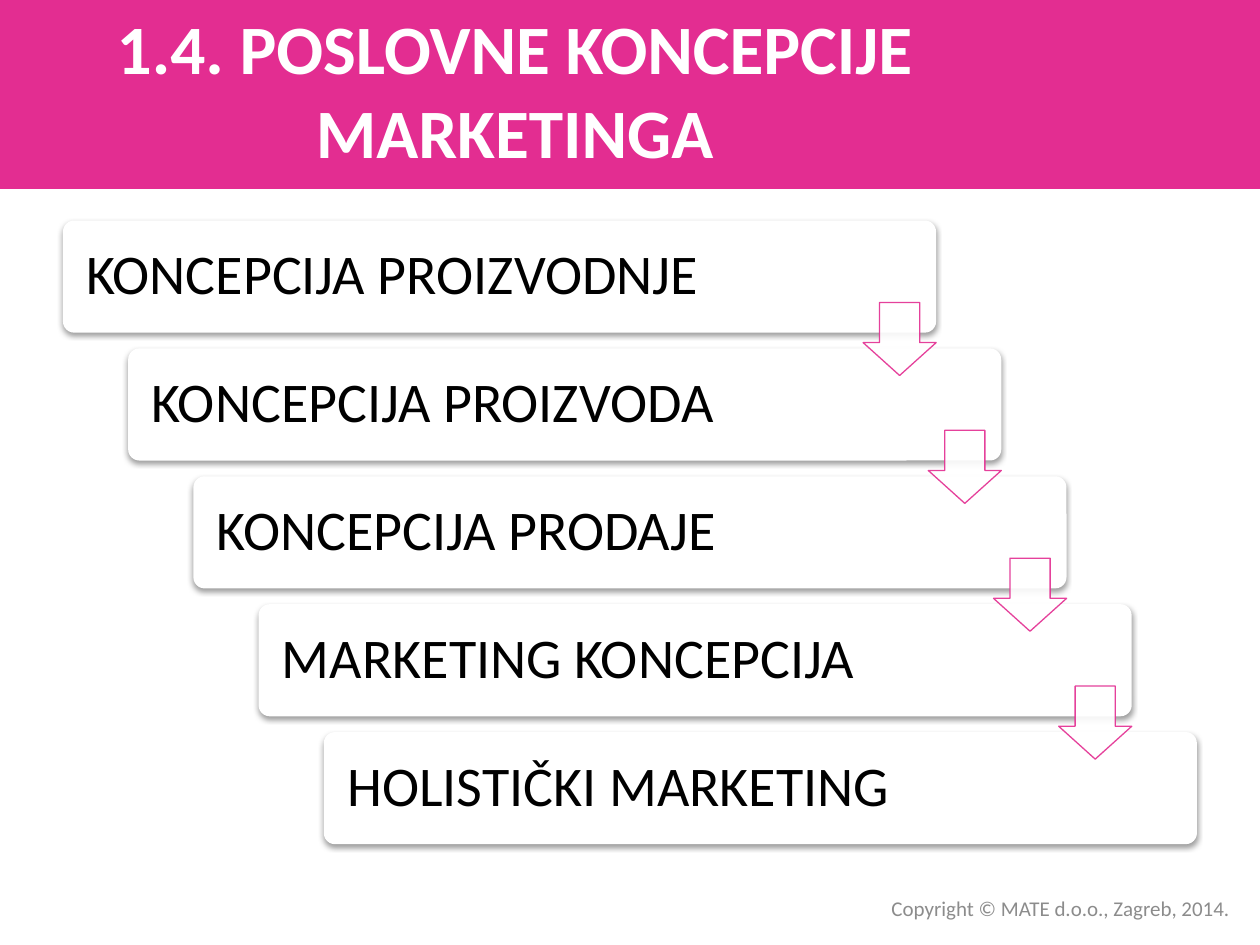
from dataclasses import dataclass

from lxml.etree import SubElement
from pptx import Presentation
from pptx.dml.color import RGBColor
from pptx.enum.shapes import MSO_SHAPE
from pptx.enum.text import MSO_ANCHOR, MSO_AUTO_SIZE, PP_ALIGN
from pptx.oxml.ns import qn
from pptx.util import Inches, Pt


@dataclass(frozen=True)
class Theme:
    font: str = "Calibri"
    accent: RGBColor = RGBColor(0xE3, 0x2D, 0x91)
    white: RGBColor = RGBColor(0xFF, 0xFF, 0xFF)
    black: RGBColor = RGBColor(0, 0, 0)
    grey: RGBColor = RGBColor(0x8C, 0x8C, 0x8C)
    title_size: float = 39.6
    card_size: float = 32
    footer_size: float = 12


THEME = Theme()
WIDTH, HEIGHT = Inches(10), Inches(7.5)

# Staircase grid, in inches: each step moves right and down by a fixed amount
FIRST_LEFT, FIRST_TOP = 0.5, 1.75
STEP_RIGHT, STEP_DOWN = 2.07 / 4, 4.06 / 4
CARD_WIDTH, CARD_HEIGHT = 6.93, 0.89
ARROW_SIZE, ARROW_DROP = 0.58, 0.65

CONCEPTS = [
    "KONCEPCIJA PROIZVODNJE",
    "KONCEPCIJA PROIZVODA",
    "KONCEPCIJA PRODAJE",
    "MARKETING KONCEPCIJA",
    "HOLISTIČKI MARKETING",
]


def write(box, text, align, inset=None, line_spacing=None, **font):
    """Put one vertically centred paragraph into a shape."""
    frame = box.text_frame
    frame.word_wrap = True
    frame.auto_size = MSO_AUTO_SIZE.NONE
    frame.vertical_anchor = MSO_ANCHOR.MIDDLE
    if inset is not None:
        frame.margin_left = frame.margin_right = Inches(inset)
    para = frame.paragraphs[0]
    para.text = text
    para.alignment = align
    para.line_spacing = line_spacing
    span = para.runs[0].font
    span.color.rgb = font.pop("color")
    for name, value in {"name": THEME.font, **font}.items():
        setattr(span, name, value)


def add_filled(page, kind, area, color):
    shape = page.shapes.add_shape(kind, *area)
    shape.shadow.inherit = False
    shape.fill.solid()
    shape.fill.fore_color.rgb = color
    shape.line.fill.background()
    return shape


def add_soft_shadow(shape):
    effects = shape._element.spPr.find(qn("a:effectLst"))
    shadow = SubElement(effects, qn("a:outerShdw"), blurRad=str(Pt(3.1)),
                        dist=str(Pt(1.6)), dir="5400000", rotWithShape="0")
    color = SubElement(shadow, qn("a:srgbClr"), val=str(THEME.black))
    SubElement(color, qn("a:alpha"), val="38000")


def add_card(page, step, text):
    area = [Inches(value) for value in (
        FIRST_LEFT + step * STEP_RIGHT, FIRST_TOP + step * STEP_DOWN,
        CARD_WIDTH, CARD_HEIGHT)]
    card = add_filled(page, MSO_SHAPE.ROUNDED_RECTANGLE, area, THEME.white)
    card.adjustments[0] = 0.1
    add_soft_shadow(card)
    write(card, text, PP_ALIGN.LEFT, inset=0.16, line_spacing=0.9,
          size=Pt(THEME.card_size), color=THEME.black)


def add_arrow(page, step):
    """Arrow at the right end of a card, pointing to the next one."""
    area = [Inches(value) for value in (
        FIRST_LEFT + step * STEP_RIGHT + CARD_WIDTH - ARROW_SIZE,
        FIRST_TOP + step * STEP_DOWN + ARROW_DROP,
        ARROW_SIZE, ARROW_SIZE)]
    arrow = add_filled(page, MSO_SHAPE.DOWN_ARROW, area, THEME.white)
    # For this preset the first adjustment is the shaft, the second the head
    arrow.adjustments[0], arrow.adjustments[1] = 0.55, 0.45
    arrow.line.color.rgb = THEME.accent
    arrow.line.width = Pt(0.75)
    for color in arrow._element.spPr.iter(qn("a:srgbClr")):
        SubElement(color, qn("a:alpha"), val="90000")


def add_title(page, text):
    title = page.shapes.title
    place = {"left": 0, "top": Inches(0.08),
             "width": Inches(8.17), "height": Inches(1.25)}
    for name, value in place.items():
        setattr(title, name, value)
    write(title, text, PP_ALIGN.CENTER, size=Pt(THEME.title_size),
          bold=True, color=THEME.white)
    # Bring the title in front of the band
    page.shapes._spTree.append(title._element)


def add_footer(page, text):
    box = page.shapes.add_textbox(
        Inches(4.69), Inches(7.06), Inches(5.17), Inches(0.3))
    write(box, text, PP_ALIGN.RIGHT,
          size=Pt(THEME.footer_size), color=THEME.grey)


def main():
    deck = Presentation()
    deck.slide_width, deck.slide_height = WIDTH, HEIGHT
    page = deck.slides.add_slide(deck.slide_layouts[5])

    # Header band
    add_filled(page, MSO_SHAPE.RECTANGLE, (0, 0, WIDTH, HEIGHT // 5),
               THEME.accent)

    # Staircase of concepts, with arrows in front of the cards
    for step, concept in enumerate(CONCEPTS):
        add_card(page, step, concept)
    for step in range(len(CONCEPTS) - 1):
        add_arrow(page, step)

    # Title and footer
    add_title(page, "1.4. POSLOVNE KONCEPCIJE MARKETINGA")
    add_footer(page, "Copyright © MATE d.o.o., Zagreb, 2014.")

    deck.save("out.pptx")


if __name__ == "__main__":
    main()
